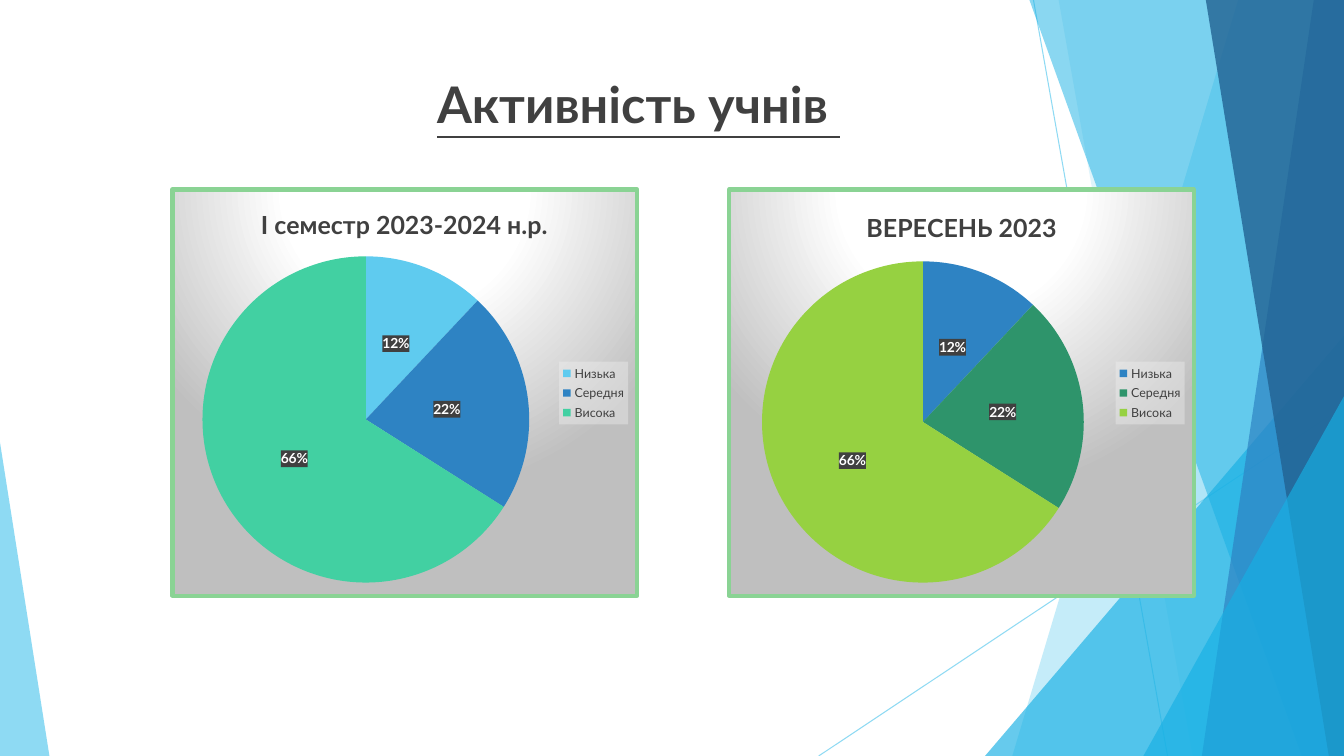
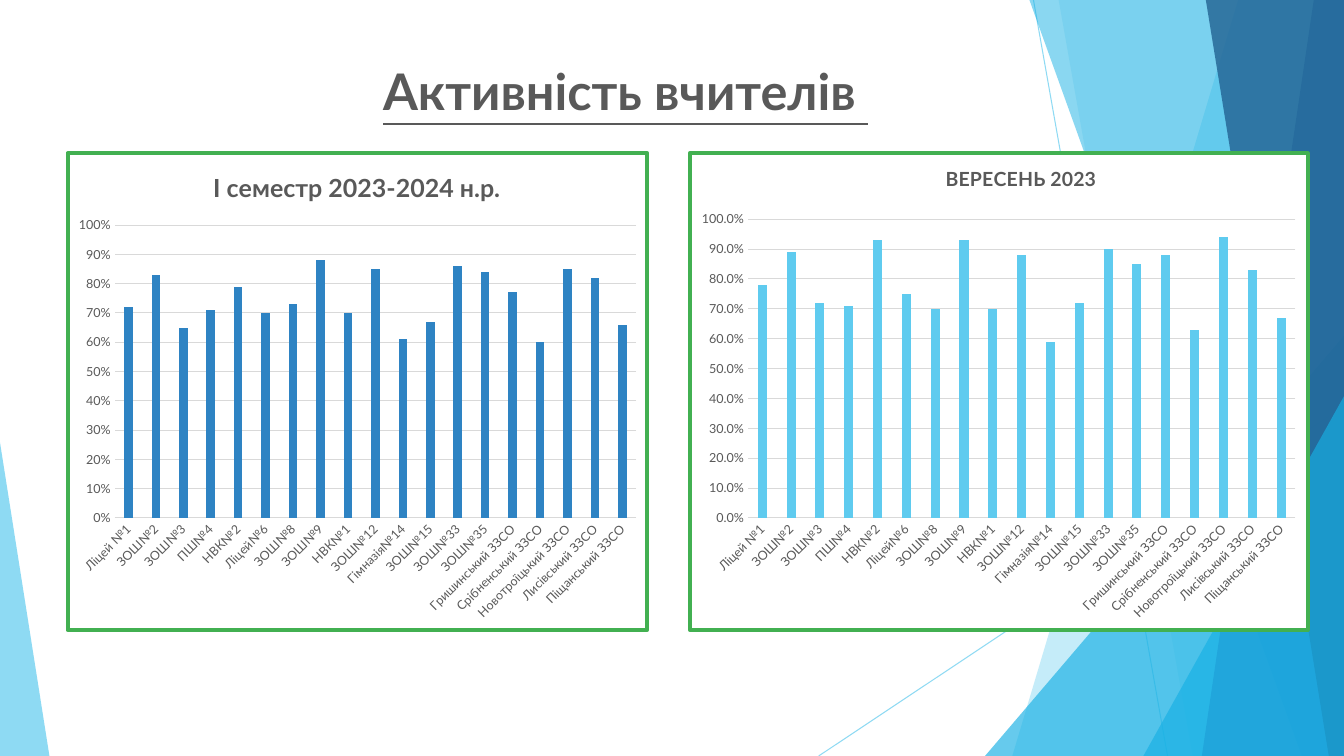
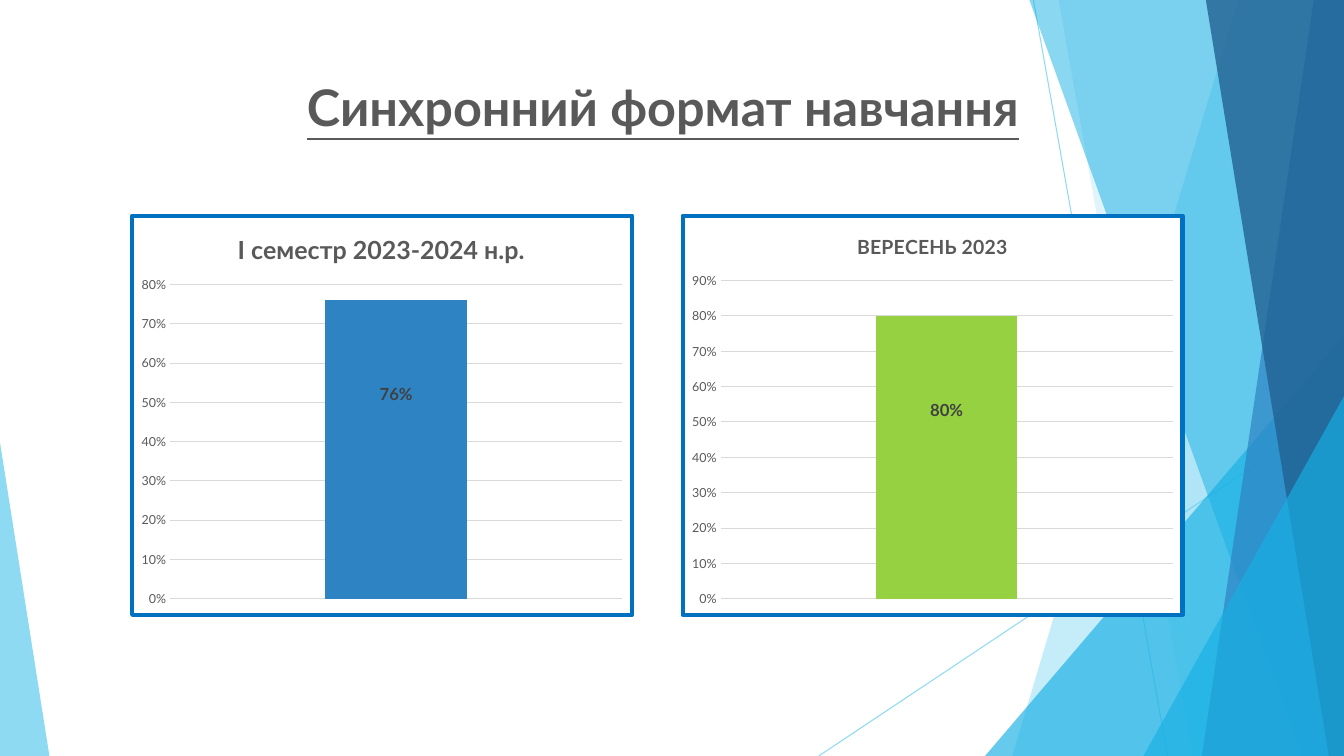
from pptx import Presentation
from pptx.chart.data import CategoryChartData
from pptx.dml.color import RGBColor
from pptx.enum import chart as ch, shapes, text
from pptx.oxml import parse_xml
from pptx.oxml.ns import nsdecls
from pptx.util import Inches, Pt

FONT = "Lato"
WIDTH, HEIGHT = 13.33, 7.5
SKY, CYAN, BLUE, NAVY = "5FCBEF", "17B0E4", "2E83C3", "226292"
DARK, GREY, PALE = "404040", "595959", "D9D9D9"
LIME, MINT, GREEN = "96D141", "42D0A2", "2E946B"
color = RGBColor.from_string


def paint(shape, fill, hex_color, opacity):
    """Give the shape's fill or line one see-through colour, without shadow."""
    fill.solid()
    fill.fore_color.rgb = color(hex_color)
    shape.element.xpath(".//a:srgbClr")[0].append(
        parse_xml(f'<a:alpha {nsdecls("a")} val="{opacity * 1000}"/>'))
    shape.element.xpath("p:spPr")[0].append(parse_xml(f'<a:effectLst {nsdecls("a")}/>'))


def place(part, index, inner=False, **fractions):
    """Pin a chart part by x, y, w, h fractions; index is where its layout goes."""
    for old in part.xpath("c:layout"):
        part.remove(old)
    target = '<c:layoutTarget val="inner"/>' if inner else ""
    modes = "" if part.tag.endswith("dLbl") else '<c:xMode val="edge"/><c:yMode val="edge"/>'
    values = "".join(f'<c:{key} val="{value:.4f}"/>' for key, value in fractions.items())
    part.insert(index, parse_xml(f'<c:layout {nsdecls("c")}><c:manualLayout>'
                                 f'{target}{modes}{values}</c:manualLayout></c:layout>'))


prs = Presentation()
prs.slide_width, prs.slide_height = Inches(WIDTH), Inches(HEIGHT)
layout = prs.slide_layouts[5]

SCHOOLS = ["Ліцей №1", "ЗОШ№2", "ЗОШ№3", "ПШ№4", "НВК№2", "Ліцей№6", "ЗОШ№8",
           "ЗОШ№9", "НВК№1", "ЗОШ№12", "Гімназія№14", "ЗОШ№15", "ЗОШ№33", "ЗОШ№35",
           "Гришинський ЗЗСО", "Срібненський ЗЗСО", "Новотроїцький ЗЗСО",
           "Лисівський ЗЗСО", "Піщанський ЗЗСО"]
LEVELS = ["Низька", "Середня", "Висока"]
SEMESTER, SEPTEMBER = "І семестр 2023-2024 н.р.", "ВЕРЕСЕНЬ 2023"

WHITE_FILL = '<a:solidFill><a:srgbClr val="FFFFFF"/></a:solidFill>'
SPOTLIGHT_FILL = (
    '<a:gradFill><a:gsLst><a:gs pos="0"><a:srgbClr val="FFFFFF"/></a:gs>'
    '<a:gs pos="39000"><a:srgbClr val="FFFFFF"/></a:gs>'
    '<a:gs pos="100000"><a:srgbClr val="BFBFBF"/></a:gs></a:gsLst><a:path path="circle">'
    '<a:fillToRect l="50000" t="-80000" r="50000" b="180000"/></a:path></a:gradFill>')

# box: left, top, width, height; heading: left, top, size; plot: left, top, width, height
pages = [
    dict(title="Активність учнів ", title_box=(3.9, 0.68, 4.87, 0.71), ink=DARK,
         kind="pie", cats=LEVELS, frame="8AD394", background=SPOTLIGHT_FILL, charts=[
             dict(name=SEMESTER, box=(1.69, 1.86, 4.65, 4.07), heading=(2.53, 1.98, 18),
                  plot=(1.99, 2.53, 3.27, 3.27), values=[12, 22, 66],
                  colors=[SKY, BLUE, MINT]),
             dict(name=SEPTEMBER, box=(7.21, 1.86, 4.65, 4.07), heading=(8.54, 2.02, 18),
                  plot=(7.54, 2.58, 3.22, 3.22), values=[12, 22, 66],
                  colors=[BLUE, GREEN, LIME])]),
    dict(title="Активність вчителів ", title_box=(3.56, 0.55, 5.29, 0.71), ink=GREY,
         kind="schools", cats=SCHOOLS, frame="42B051", background=WHITE_FILL, charts=[
             dict(name=SEMESTER, box=(0.65, 1.5, 5.79, 4.77), heading=(2.06, 1.62, 18),
                  plot=(1.12, 2.22, 5.21, 2.93), colors=[BLUE], top=1, ticks="0%",
                  values=[0.72, 0.83, 0.65, 0.71, 0.79, 0.7, 0.73, 0.88, 0.7, 0.85,
                          0.61, 0.67, 0.86, 0.84, 0.77, 0.6, 0.85, 0.82, 0.66]),
             dict(name=SEPTEMBER, box=(6.82, 1.5, 6.17, 4.77), heading=(9.34, 1.58, 14),
                  plot=(7.4, 2.16, 5.47, 2.99), colors=[SKY], top=1, ticks="0.0%",
                  values=[0.78, 0.89, 0.72, 0.71, 0.93, 0.75, 0.7, 0.93, 0.7, 0.88,
                          0.59, 0.72, 0.9, 0.85, 0.88, 0.63, 0.94, 0.83, 0.67])]),
    dict(title="Синхронний формат навчання", title_box=(2.76, 0.7, 7.63, 0.71), ink=GREY,
         kind="total", cats=["1"], frame="0070C0", background=WHITE_FILL, charts=[
             dict(name=SEMESTER, box=(1.29, 2.12, 5, 4), heading=(2.3, 2.23, 18),
                  plot=(1.67, 2.81, 4.52, 3.15), values=[0.76], colors=[BLUE],
                  top=0.8, ticks="0%", label_shift=-0.14),
             dict(name=SEPTEMBER, box=(6.75, 2.12, 5, 4), heading=(8.46, 2.25, 14),
                  plot=(7.13, 2.77, 4.52, 3.19), values=[0.8], colors=[LIME],
                  top=0.9, ticks="0%", label_shift=-0.12)]),
]
slides = [prs.slides.add_slide(layout) for page in pages]

# Shared backdrop: drawn once, then moved to the layout
canvas = slides[0].shapes
backdrop = []
for x1, y1, x2, y2 in [(10.25, 0, 11.58, HEIGHT), (WIDTH, 4.03, 8.12, HEIGHT)]:
    ray = canvas.add_connector(shapes.MSO_CONNECTOR.STRAIGHT,
                               Inches(x1), Inches(y1), Inches(x2), Inches(y2))
    ray.line.width = Pt(0.75)
    paint(ray, ray.line.fill, SKY, 70)
    backdrop.append(ray)

# band: top x, bottom x; wedge: left, top, width, apex
for kind, geometry, hex_color, opacity in [
        ("band", (12.28, 10.04), SKY, 36),
        ("band", (10.5, 11.83), SKY, 20),
        ("wedge", (9.77, 3.33, 3.56, 1), CYAN, 66),
        ("band", (10.21, 12.91), CYAN, 50),
        ("band", (13.03, 11.92), BLUE, 70),
        ("band", (11.96, 13.18), NAVY, 80),
        ("wedge", (11.34, 3.93, 1.99, 1), CYAN, 66),
        ("wedge", (0, 4.39, 0.49, 0), SKY, 70)]:
    if kind == "band":
        top_x, bottom_x = geometry
        outline = canvas.build_freeform(Inches(top_x), 0)
        outline.add_line_segments([(Inches(x), Inches(y)) for x, y in
                                   [(WIDTH, 0), (WIDTH, HEIGHT), (bottom_x, HEIGHT)]])
        facet = outline.convert_to_shape()
    else:
        left, top, width, apex = geometry
        facet = canvas.add_shape(shapes.MSO_SHAPE.ISOSCELES_TRIANGLE, Inches(left),
                                 Inches(top), Inches(width), Inches(HEIGHT - top))
        facet.adjustments[0] = apex
    facet.line.fill.background()
    paint(facet, facet.fill, hex_color, opacity)
    backdrop.append(facet)
for piece in backdrop:
    layout.shapes.element.append(piece.element)

for slide, page in zip(slides, pages):
    title = slide.shapes.title
    title.left, title.top, title.width, title.height = map(Inches, page["title_box"])
    title.text_frame.text = page["title"]
    title.text_frame.word_wrap = False
    title.text_frame.auto_size = text.MSO_AUTO_SIZE.SHAPE_TO_FIT_TEXT
    title.text_frame.vertical_anchor = text.MSO_ANCHOR.TOP
    heading = title.text_frame.paragraphs[0]
    heading.alignment = text.PP_ALIGN.CENTER
    heading.font.name, heading.font.size = FONT, Pt(36)
    heading.font.bold = heading.font.underline = True
    heading.font.color.rgb = color(page["ink"])

    is_pie = page["kind"] == "pie"
    chart_type = ch.XL_CHART_TYPE.PIE if is_pie else ch.XL_CHART_TYPE.COLUMN_CLUSTERED
    for item in page["charts"]:
        data = CategoryChartData(number_format="General" if is_pie else "0%")
        data.categories = page["cats"]
        data.add_series("Series 1", item["values"])
        left, top, width, height = item["box"]
        chart = slide.shapes.add_chart(chart_type, *map(Inches, item["box"]), data).chart
        chart.font.name, chart.font.size = FONT, Pt(10)
        space = chart.element
        space.xpath("c:chart")[0].addnext(parse_xml(
            f'<c:spPr {nsdecls("c", "a")}>{page["background"]}<a:ln w="{Pt(3)}"><a:solidFill>'
            f'<a:srgbClr val="{page["frame"]}"/></a:solidFill><a:round/></a:ln></c:spPr>'))

        chart.has_title = True
        caption = chart.chart_title.text_frame
        caption.text = item["name"]
        name_x, name_y, name_size = item["heading"]
        caption_font = caption.paragraphs[0].font
        caption_font.name, caption_font.size, caption_font.bold = FONT, Pt(name_size), True
        caption_font.color.rgb = color(page["ink"])
        place(space.xpath("c:chart/c:title")[0], 1,
              x=(name_x - left) / width, y=(name_y - top) / height)
        plot_x, plot_y, plot_w, plot_h = item["plot"]
        place(space.xpath(".//c:plotArea")[0], 0, inner=True,
              x=(plot_x - left) / width, y=(plot_y - top) / height,
              w=plot_w / width, h=plot_h / height)

        plot = chart.plots[0]
        series = plot.series[0]
        chart.has_legend = is_pie
        if is_pie:
            plot.vary_by_categories = True
            for number, slice_color in enumerate(item["colors"]):
                slice_fill = series.points[number].format.fill
                slice_fill.solid()
                slice_fill.fore_color.rgb = color(slice_color)
            labels = series.data_labels
            labels.show_percentage, labels.show_value = True, False
            labels.number_format, labels.number_format_is_linked = "0%", False
            labels.position = ch.XL_LABEL_POSITION.CENTER
            labels.font.name, labels.font.size, labels.font.bold = FONT, Pt(10), True
            labels.font.color.rgb = color("FFFFFF")
            space.xpath(".//c:ser/c:dLbls/c:numFmt")[0].addnext(parse_xml(
                f'<c:spPr {nsdecls("c", "a")}><a:solidFill><a:srgbClr val="{DARK}"/>'
                '</a:solidFill></c:spPr>'))
            legend = chart.legend
            legend.position = ch.XL_LEGEND_POSITION.RIGHT
            legend.include_in_layout = False
            legend.font.name, legend.font.size = FONT, Pt(9)
            legend.font.color.rgb = color(DARK)
            place(space.xpath(".//c:legend")[0], 1, x=0.832, y=0.424)
            space.xpath(".//c:legend/c:overlay")[0].addnext(parse_xml(
                f'<c:spPr {nsdecls("c", "a")}><a:solidFill><a:srgbClr val="F2F2F2">'
                '<a:alpha val="39000"/></a:srgbClr></a:solidFill></c:spPr>'))
            continue

        plot.vary_by_categories = False
        plot.gap_width, plot.overlap = 219, -27
        series.format.fill.solid()
        series.format.fill.fore_color.rgb = color(item["colors"][0])
        shares, names = chart.value_axis, chart.category_axis
        shares.minimum_scale, shares.maximum_scale, shares.major_unit = 0, item["top"], 0.1
        shares.tick_labels.number_format = item["ticks"]
        shares.tick_labels.number_format_is_linked = False
        shares.format.line.fill.background()
        for line in (shares.major_gridlines.format.line, names.format.line):
            line.color.rgb, line.width = color(PALE), Pt(0.75)
        for axis in (shares, names):
            axis.major_tick_mark = ch.XL_TICK_MARK.NONE
            axis.tick_labels.font.name, axis.tick_labels.font.size = FONT, Pt(9)
            axis.tick_labels.font.color.rgb = color(GREY)
        if page["kind"] == "schools":
            space.xpath(".//c:catAx/c:txPr/a:bodyPr")[0].set("rot", "-2700000")
        else:
            names.visible = False
            label = series.points[0].data_label
            label.font.name, label.font.size, label.font.bold = FONT, Pt(12), True
            label.font.color.rgb = color(DARK)
            label.position = ch.XL_LABEL_POSITION.CENTER
            place(space.xpath(".//c:dLbl")[0], 1, x=0, y=item["label_shift"])
            for leader_lines in space.xpath(".//c:dLbls/c:showLeaderLines"):
                leader_lines.set("val", "0")

prs.save("out.pptx")
